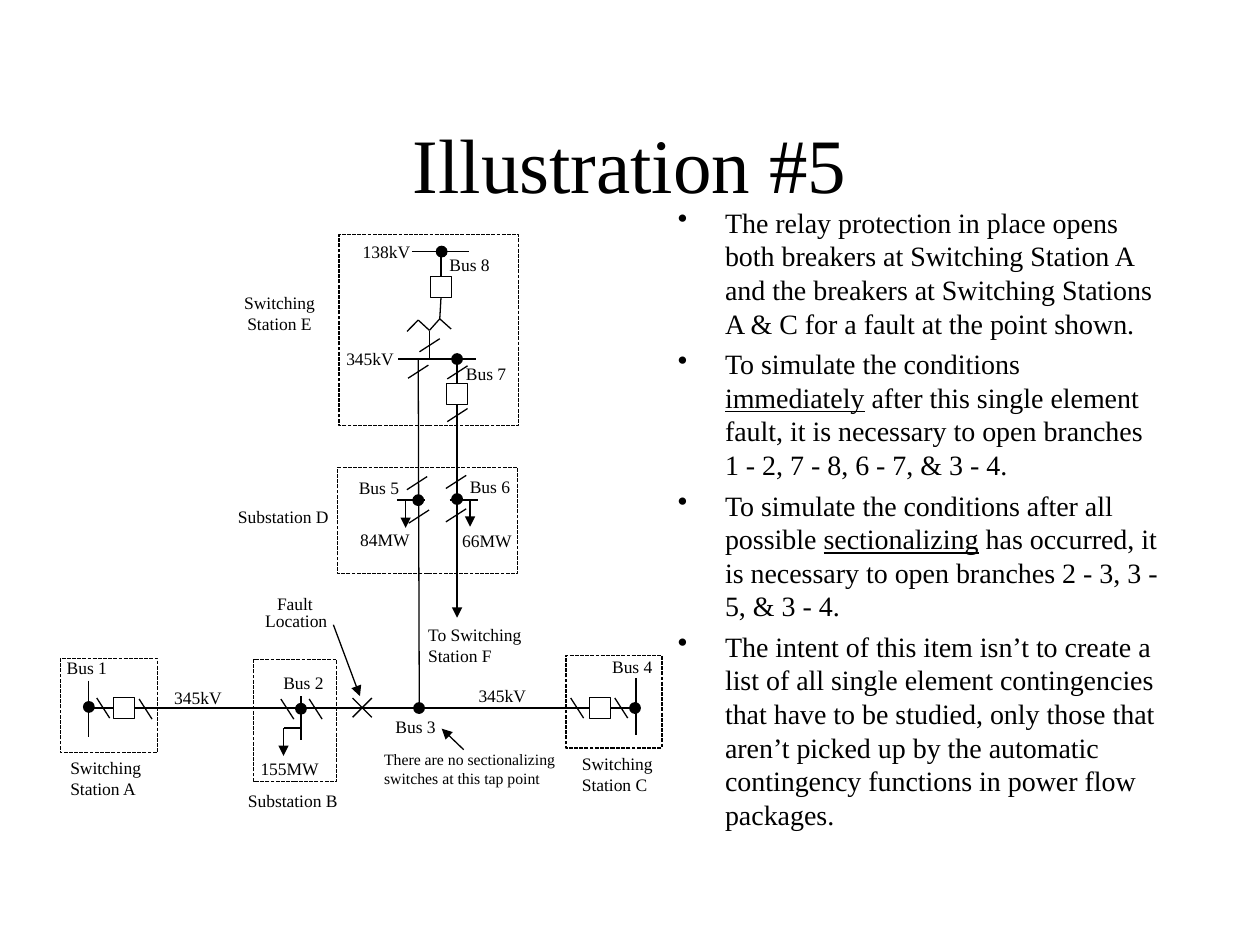
import itertools

import pptx
import pptx.dml.color
import pptx.enum.dml
import pptx.enum.shapes
import pptx.enum.text
import pptx.oxml
import pptx.oxml.ns
import pptx.util

Pt = pptx.util.Pt
SHAPES = pptx.enum.shapes.MSO_SHAPE
ALIGN = pptx.enum.text.PP_ALIGN
BLACK = pptx.dml.color.RGBColor(0, 0, 0)
TOP, LEFT, BOTTOM, RIGHT = range(4)
ONE_LINE, TWO_LINES = 19.4, 31.7


def add_xml(parent, tag, **attributes):
    child = pptx.oxml.parse_xml(f"<{tag} {pptx.oxml.ns.nsdecls('a')}/>")
    for name, value in attributes.items():
        child.set(name, value)
    parent.append(child)


class Diagram:
    """One-line diagram on a slide, with all lengths in points."""

    font_name = "Times New Roman"
    line_width = 0.75
    breaker_size = 12
    bus_size = 6

    def __init__(self, slide):
        self.slide = slide
        self.shapes = slide.shapes

    def add_text(self, paragraph, text, size, underline=None):
        run = paragraph.add_run()
        run.text = text
        run.font.name = self.font_name
        run.font.size = Pt(size)
        run.font.color.rgb = BLACK
        run.font.underline = underline

    def title(self, text, left, top, width, height):
        heading = self.shapes.title
        heading.left, heading.top = Pt(left), Pt(top)
        heading.width, heading.height = Pt(width), Pt(height)
        heading.text_frame.vertical_anchor = pptx.enum.text.MSO_ANCHOR.MIDDLE
        paragraph = heading.text_frame.paragraphs[0]
        paragraph.alignment = ALIGN.CENTER
        self.add_text(paragraph, text, 44)

    def bullets(self, items, left, top, width, height):
        """Each item is a list of runs; every second run is underlined."""
        frame = self.shapes.add_textbox(Pt(left), Pt(top), Pt(width), Pt(height)).text_frame
        frame.word_wrap = True
        for number, item in enumerate(items):
            paragraph = frame.add_paragraph() if number else frame.paragraphs[0]
            properties = paragraph._p.get_or_add_pPr()
            properties.set("marL", str(Pt(27)))
            properties.set("indent", str(-Pt(27)))
            if number:
                paragraph.space_before = Pt(4)
            add_xml(properties, "a:buChar", char="•")
            for position, text in enumerate(item):
                self.add_text(paragraph, text, 16, underline=position % 2 == 1)

    def label(self, text, left, top, width, height=ONE_LINE, size=10, align=ALIGN.LEFT):
        frame = self.shapes.add_textbox(Pt(left), Pt(top), Pt(width), Pt(height)).text_frame
        frame.word_wrap = True
        frame.auto_size = pptx.enum.text.MSO_AUTO_SIZE.SHAPE_TO_FIT_TEXT
        frame.paragraphs[0].alignment = align
        self.add_text(frame.paragraphs[0], text, size)

    def outline(self, kind, left, top, width, height):
        shape = self.shapes.add_shape(kind, Pt(left), Pt(top), Pt(width), Pt(height))
        shape.shadow.inherit = False
        shape.fill.background()
        shape.line.color.rgb = BLACK
        shape.line.width = Pt(self.line_width)
        return shape

    def station(self, left, top, width, height):
        border = self.outline(SHAPES.RECTANGLE, left, top, width, height)
        border.line.dash_style = pptx.enum.dml.MSO_LINE.SQUARE_DOT

    def breaker(self, x, y):
        size = self.breaker_size
        return self.outline(SHAPES.RECTANGLE, x - size / 2, y - size / 2, size, size)

    def bus(self, x, y):
        size = self.bus_size
        dot = self.outline(SHAPES.OVAL, x - size / 2, y - size / 2, size, size)
        dot.fill.solid()
        dot.fill.fore_color.rgb = BLACK

    def wire(self, x1, y1, x2, y2, begin=None, end=None, arrow=False):
        """Straight line; begin and end are optional (shape, side) joints."""
        line = self.shapes.add_connector(
            pptx.enum.shapes.MSO_CONNECTOR.STRAIGHT, Pt(x1), Pt(y1), Pt(x2), Pt(y2))
        line.line.color.rgb = BLACK
        line.line.width = Pt(self.line_width)
        if arrow:
            add_xml(line.line._get_or_add_ln(), "a:tailEnd", type="triangle")
        add_xml(line._element.spPr, "a:effectLst")
        if begin:
            line.begin_connect(*begin)
        if end:
            line.end_connect(*end)

    def switch(self, x, y, dx, dy):
        """Slanted stroke centred on a conductor."""
        self.wire(x - dx / 2, y - dy / 2, x + dx / 2, y + dy / 2)


def draw_network(diagram):
    for area in [(193.7, 134.1, 102.7, 109.2), (193, 267.1, 102.7, 60.8),
                 (144.9, 376.8, 47.5, 69.7), (34.5, 376.1, 55.5, 54),
                 (323.5, 374.4, 54.8, 53.1)]:
        diagram.station(*area)

    breaker_a = diagram.breaker(70.8, 404.6)
    breaker_c = diagram.breaker(342.8, 404.6)
    breaker_7 = diagram.breaker(261.2, 225)
    breaker_8 = diagram.breaker(252, 164)

    # Conductors that end at a breaker
    diagram.wire(77, 404.6, 336, 404.6, (breaker_a, RIGHT), (breaker_c, LEFT))
    diagram.wire(51, 404.6, 65, 404.6, end=(breaker_a, LEFT))
    diagram.wire(349, 404.6, 363, 404.6, begin=(breaker_c, RIGHT))
    diagram.wire(261.2, 205.2, 261.2, 219, end=(breaker_7, TOP))
    diagram.wire(261.2, 231, 261.2, 353, begin=(breaker_7, BOTTOM), arrow=True)
    diagram.wire(252, 143.6, 252, 158, end=(breaker_8, TOP))
    diagram.wire(252, 170, 251.3, 182.2, begin=(breaker_8, BOTTOM))

    # Bus bars and plain conductors
    for ends in [(50.6, 389, 50.6, 421), (363.4, 387.4, 363.4, 419.8),
                 (172, 398, 172, 422.6), (172, 416, 162, 416),
                 (227.5, 205.2, 272.2, 205.2), (235.4, 143.6, 267.8, 143.6),
                 (226.8, 285.8, 242.6, 285.8), (257, 285.8, 272.9, 285.8),
                 (239, 205.2, 239.6, 404), (245.4, 204.5, 245.4, 189)]:
        diagram.wire(*ends)

    transformer = [(232.6, 189.4), (239, 182.9), (245.4, 188.8), (251.3, 182.2), (257.8, 188)]
    for start, finish in itertools.pairwise(transformer):
        diagram.wire(*start, *finish)

    # Loads and pointers
    for ends in [(162, 416, 162, 432), (268.6, 285.8, 268.6, 301),
                 (231.8, 286.5, 231.8, 301.7), (265, 428.4, 252.4, 416.4),
                 (190.5, 357, 205.7, 397.8)]:
        diagram.wire(*ends, arrow=True)

    for centre in [(50.8, 404), (172, 405), (239.5, 404.6), (362.9, 404.6),
                   (239, 285.8), (261.2, 285.2), (261.2, 205.2), (252.4, 143.8)]:
        diagram.bus(*centre)

    for centre in [(261.4, 237.2), (261.4, 212.8), (239, 212.4), (245.5, 197.3),
                   (260.6, 294.5), (260.6, 275.4), (238.3, 276.1), (239.4, 295.2)]:
        diagram.switch(*centre, 11.6, -7.5)
    for centre in [(59, 404.6), (83.2, 405.2), (164.2, 405.2), (180.4, 405.2),
                   (329.8, 404.6), (355, 404.6)]:
        diagram.switch(*centre, 7.4, 11.5)
    for rise in (11, -11):  # fault cross
        diagram.switch(207, 404.4, 11, rise)


def label_network(diagram):
    for text, left, top, width in [
            ("Bus 1", 31, 372.2, 40), ("Bus 2", 154.8, 380.2, 40), ("Bus 3", 218.9, 405.4, 55),
            ("Bus 4", 342.7, 371.5, 40), ("Bus 5", 198, 269.3, 42), ("Bus 6", 261.4, 268.6, 55),
            ("Bus 7", 259.2, 203.8, 41), ("Bus 8", 249.8, 141.8, 41),
            ("155MW", 141.8, 429.8, 48), ("84MW", 198.7, 298.8, 60), ("66MW", 257, 299.5, 48),
            ("138kV", 200.2, 133.9, 44), ("345kV", 190.8, 195.1, 58),
            ("345kV", 92.5, 388.8, 45), ("345kV", 266.4, 388.1, 45),
            ("Substation B", 134.6, 447.8, 68), ("Substation D", 128.9, 285.8, 68),
            ("Fault", 151.2, 335.5, 46), ("Location", 144.5, 344.9, 55)]:
        diagram.label(text, left, top, width)
    for text, left, top, width in [
            ("Switching Station A", 33.1, 429.1, 62.6), ("Switching Station C", 325.4, 427, 59),
            ("To Switching Station F", 237.6, 352.8, 75)]:
        diagram.label(text, left, top, width, TWO_LINES)
    diagram.label("Switching Station E", 129.5, 163.4, 60.5, TWO_LINES, align=ALIGN.CENTER)
    diagram.label("There are no sectionalizing switches at this tap point",
                  212.4, 424.8, 123.8, 28.8, size=9)


def main():
    deck = pptx.Presentation()
    deck.slide_width, deck.slide_height = Pt(720), Pt(540)
    diagram = Diagram(deck.slides.add_slide(deck.slide_layouts[5]))
    diagram.title("Illustration #5", 54, 48, 612, 90)
    diagram.bullets([
        ["The relay protection in place opens both breakers at Switching Station A and the "
         "breakers at Switching Stations A & C for a fault at the point shown."],
        ["To simulate the conditions ", "immediately", " after this single element fault, it is "
         "necessary to open branches 1 - 2, 7 - 8, 6 - 7, & 3 - 4."],
        ["To simulate the conditions after all possible ", "sectionalizing", " has occurred, it "
         "is necessary to open branches 2 - 3, 3 - 5, & 3 - 4."],
        ["The intent of this item isn’t to create a list of all single element contingencies "
         "that have to be studied, only those that aren’t picked up by the automatic "
         "contingency functions in power flow packages."],
    ], 380.2, 113.8, 289.4, 365.8)
    draw_network(diagram)
    label_network(diagram)
    deck.save("out.pptx")


if __name__ == "__main__":
    main()
